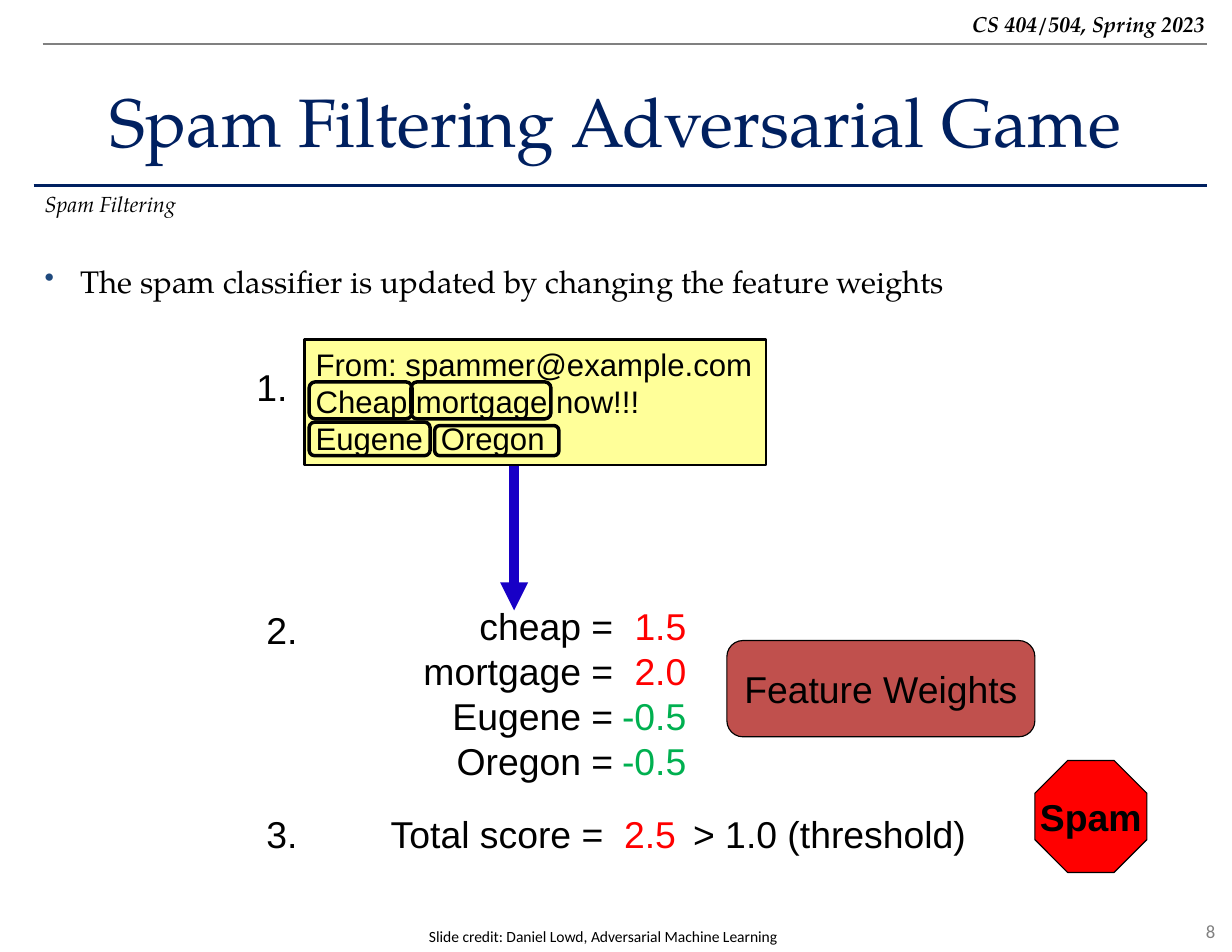
from dataclasses import dataclass
from typing import Optional

from lxml import etree
from pptx import Presentation
from pptx.dml.color import RGBColor
from pptx.enum.shapes import MSO_CONNECTOR, MSO_SHAPE
from pptx.enum.text import MSO_ANCHOR, PP_ALIGN
from pptx.oxml.ns import qn
from pptx.util import Pt

LEFT, CENTER, RIGHT = PP_ALIGN.LEFT, PP_ALIGN.CENTER, PP_ALIGN.RIGHT
TOP, MIDDLE = MSO_ANCHOR.TOP, MSO_ANCHOR.MIDDLE
RECT, ROUNDED, OCTAGON = MSO_SHAPE.RECTANGLE, MSO_SHAPE.ROUNDED_RECTANGLE, MSO_SHAPE.OCTAGON
STRAIGHT = MSO_CONNECTOR.STRAIGHT
SERIF, SANS, FOOTER = "TeX Gyre Pagella", "Arial", "Calibri"
BLACK, NAVY, GREY, RED, GREEN = "000000", "002060", "808080", "FF0000", "00B050"


@dataclass(frozen=True)
class Box:
    """Position and size in points."""
    left: float
    top: float
    width: float
    height: float


@dataclass(frozen=True)
class Style:
    """Look of a piece of text."""
    size: float = 24
    font: str = SANS
    color: str = BLACK
    bold: bool = False
    italic: bool = False
    align: PP_ALIGN = LEFT
    anchor: MSO_ANCHOR = TOP
    wrap: bool = True


@dataclass(frozen=True)
class Label:
    """Text with its place and style."""
    text: str
    box: Box
    style: Style


@dataclass(frozen=True)
class Panel:
    """Outlined shape with optional fill and text."""
    kind: MSO_SHAPE
    box: Box
    line_width: float
    fill: Optional[str] = None
    text: str = ""
    style: Style = Style()


@dataclass(frozen=True)
class Rule:
    """Straight line between two points."""
    start: tuple[float, float]
    end: tuple[float, float]
    color: str
    width: float
    arrow: bool = False


BODY = Style()
BADGE = Style(align=CENTER, anchor=MIDDLE, wrap=False)
RULES = [
    Rule((21.6, 119.5), (776.2, 119.5), NAVY, 2),
    Rule((27.4, 28.1), (776.2, 28.1), GREY, 1.5),
    Rule((330.5, 296.6), (330.5, 392.4), "1800C6", 6, arrow=True),
]
LABELS = [
    Label("8", Box(701.3, 587.5, 87, 21.6), Style(12, FOOTER, GREY, align=RIGHT)),
    Label("CS 404/504, Spring 2023", Box(8.6, 3.6, 773.3, 24.5),
          Style(14, SERIF, bold=True, italic=True, align=RIGHT)),
    Label("Spam Filtering Adversarial Game", Box(0, 36, 792, 82.8),
          Style(44, SERIF, NAVY, align=CENTER, anchor=MIDDLE)),
    Label("Spam Filtering", Box(21.6, 118.8, 487.4, 27.4), Style(14, SERIF, italic=True)),
    Label("1.", Box(157.7, 230.4, 34.6, 36), BODY),
    Label("2.", Box(164.2, 386.6, 34.6, 36), BODY),
    Label("3.", Box(164.2, 517.7, 34.6, 36), BODY),
    Label("> 1.0 (threshold)", Box(438.5, 517.7, 190, 36), Style(wrap=False)),
    Label("Slide credit: Daniel Lowd, Adversarial Machine Learning",
          Box(90, 592.6, 595.4, 19.4), Style(10, FOOTER, align=CENTER)),
]
BULLET = Label("The spam classifier is updated by changing the feature weights",
               Box(21.6, 164.9, 754.6, 422.6), Style(20, SERIF))
EMAIL = Panel(RECT, Box(195.8, 218.2, 296.6, 80.6), 1.5, "FFFF99",
              "From: spammer@example.com\nCheap mortgage now!!!\vEugene\tOregon", Style(20))
BADGES = [
    Panel(ROUNDED, Box(467.3, 411.8, 198, 61.9), 0.75, "C0504D", "Feature Weights", BADGE),
    Panel(OCTAGON, Box(665.3, 488.9, 72, 72), 0.75, RED, "Spam",
          Style(bold=True, align=CENTER, anchor=MIDDLE, wrap=False)),
]
WORD_FRAMES = [
    Box(198.7, 245.5, 66.2, 23.8),
    Box(264.2, 245.5, 90, 23.8),
    Box(198.7, 271.4, 77.8, 21.6),
    Box(279.4, 273.6, 79.9, 19.4),
]
WEIGHTS = [("cheap", "1.5", RED), ("mortgage", "2.0", RED),
           ("Eugene", "-0.5", GREEN), ("Oregon", "-0.5", GREEN)]


def rgb(color: str) -> RGBColor:
    """Turn a hex string into a colour."""
    return RGBColor.from_string(color)


def points(box: Box) -> tuple[Pt, Pt, Pt, Pt]:
    """Convert a box to lengths."""
    return Pt(box.left), Pt(box.top), Pt(box.width), Pt(box.height)


def format_run(run, style: Style, color: str) -> None:
    """Apply font settings to a run."""
    run.font.size, run.font.name = Pt(style.size), style.font
    run.font.bold, run.font.italic = style.bold, style.italic
    run.font.color.rgb = rgb(color)


def format_frame(frame, style: Style) -> None:
    """Apply a style to a whole text frame."""
    frame.word_wrap, frame.vertical_anchor = style.wrap, style.anchor
    for paragraph in frame.paragraphs:
        paragraph.alignment = style.align
        for run in paragraph.runs:
            format_run(run, style, style.color)


def add_label(slide, label: Label):
    """Draw a text box and return its frame."""
    frame = slide.shapes.add_textbox(*points(label.box)).text_frame
    frame.text = label.text
    format_frame(frame, label.style)
    return frame


def add_panel(slide, panel: Panel):
    """Draw an outlined shape and return its frame."""
    shape = slide.shapes.add_shape(panel.kind, *points(panel.box))
    shape.shadow.inherit = False
    shape.line.color.rgb, shape.line.width = rgb(BLACK), Pt(panel.line_width)
    if panel.fill:
        shape.fill.solid()
        shape.fill.fore_color.rgb = rgb(panel.fill)
    else:
        shape.fill.background()
    shape.text_frame.text = panel.text
    format_frame(shape.text_frame, panel.style)
    return shape.text_frame


def add_rule(slide, rule: Rule) -> None:
    """Draw a line, with an arrowhead at its end if asked."""
    ends = [Pt(value) for value in (*rule.start, *rule.end)]
    connector = slide.shapes.add_connector(STRAIGHT, *ends)
    connector.line.color.rgb, connector.line.width = rgb(rule.color), Pt(rule.width)
    if rule.arrow:
        etree.SubElement(connector.line._get_or_add_ln(), qn("a:tailEnd"), type="triangle")
    etree.SubElement(connector._element.spPr, qn("a:effectLst"))


def add_tabs(paragraph, *stops: tuple[float, str]) -> None:
    """Set tab stops given as position and alignment."""
    tabs = etree.SubElement(paragraph._p.get_or_add_pPr(), qn("a:tabLst"))
    for position, align in stops:
        etree.SubElement(tabs, qn("a:tab"), pos=str(Pt(position)), algn=align)


def add_bullet(paragraph, color: str) -> None:
    """Give a paragraph a hanging bullet."""
    properties = paragraph._p.get_or_add_pPr()
    properties.set("marL", str(Pt(23)))
    properties.set("indent", str(Pt(-23)))
    bullet_color = etree.SubElement(properties, qn("a:buClr"))
    etree.SubElement(bullet_color, qn("a:srgbClr"), val=color)
    etree.SubElement(properties, qn("a:buSzPct"), val="90000")
    etree.SubElement(properties, qn("a:buChar"), char="•")


def add_value(paragraph, value: str, color: str) -> None:
    """Append a coloured value after a tab."""
    run = paragraph.add_run()
    run.text = f"\t{value}"
    format_run(run, BODY, color)


def main() -> None:
    """Build the slide and save it."""
    deck = Presentation()
    deck.slide_width, deck.slide_height = Pt(792), Pt(612)
    slide = deck.slides.add_slide(deck.slide_layouts[6])
    for rule in RULES:
        add_rule(slide, rule)
    for label in LABELS:
        add_label(slide, label)
    add_bullet(add_label(slide, BULLET).paragraphs[0], "1F497D")
    names = "\n".join(f"\t{name} =" for name, _, _ in WEIGHTS)
    weights = add_label(slide, Label(names, Box(264.2, 384.5, 190, 123.8), BODY))
    for paragraph, (_, value, color) in zip(weights.paragraphs, WEIGHTS):
        add_tabs(paragraph, (123, "r"), (170, "r"))
        add_value(paragraph, value, color)
    total = add_label(slide, Label("Total score =", Box(244.1, 517.7, 200.2, 36), BODY)).paragraphs[0]
    add_tabs(total, (150, "l"))
    add_value(total, "2.5", RED)
    for badge in BADGES:
        add_panel(slide, badge)
    add_tabs(add_panel(slide, EMAIL).paragraphs[1], (80.5, "l"))
    for frame in WORD_FRAMES:
        add_panel(slide, Panel(ROUNDED, frame, 2.25))
    deck.save("out.pptx")


if __name__ == "__main__":
    main()
